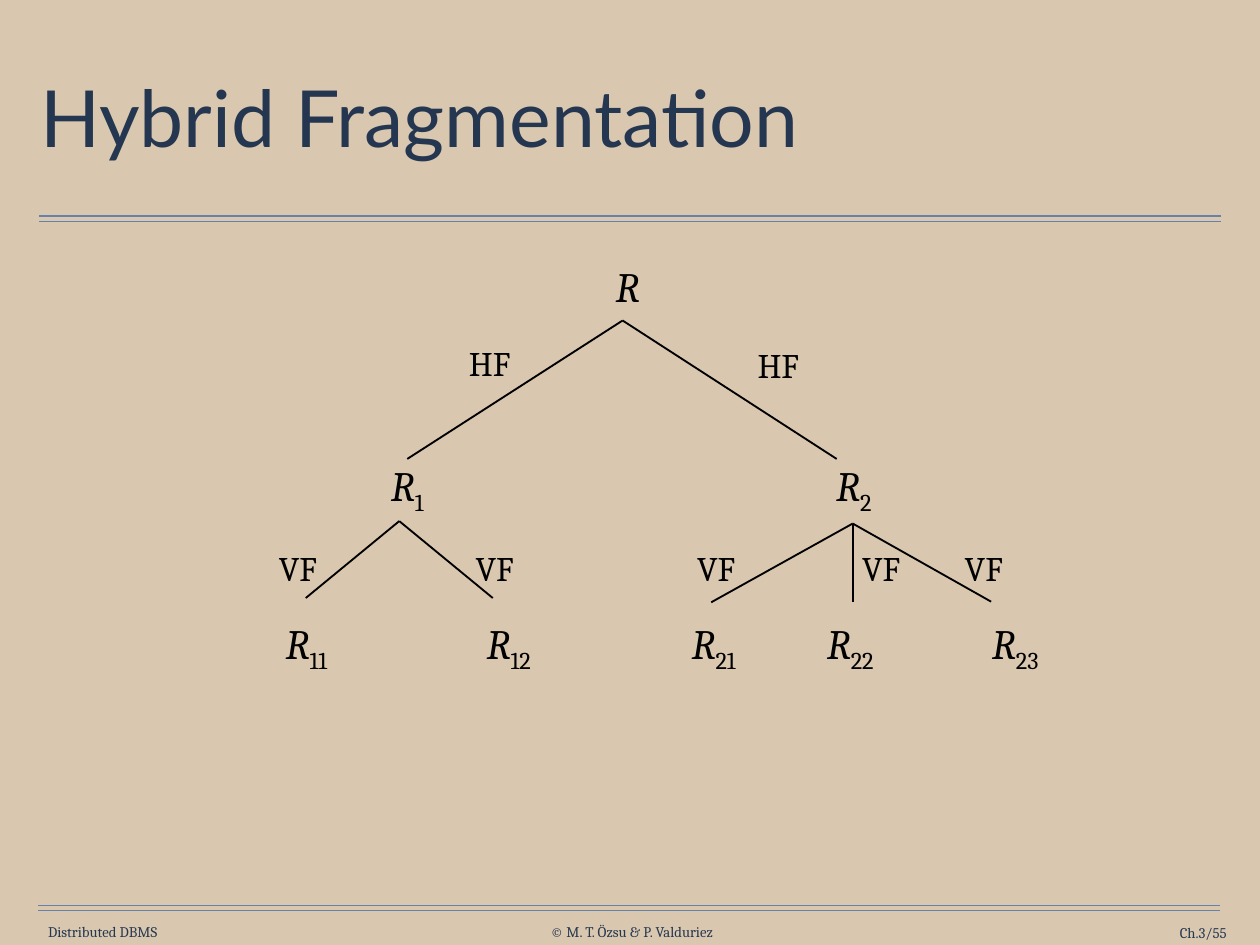
import pptx
import pptx.util
import pptx.dml.color
import pptx.enum.shapes
import pptx.enum.text
import lxml.etree
from dataclasses import dataclass

Pt = pptx.util.Pt
Align = pptx.enum.text.PP_ALIGN
Anchor = pptx.enum.text.MSO_ANCHOR


@dataclass(frozen=True)
class Theme:
    ground: str = "D9C8AF"
    title: str = "253750"
    foot: str = "263750"
    rule: str = "6682AA"
    ink: str = "000000"
    head_font: str = "Lato"
    body_font: str = "Cambria"
    title_size: int = 64
    node_size: int = 34
    edge_size: int = 28
    foot_size: int = 12


def color(code):
    return pptx.dml.color.RGBColor.from_string(code)


class Page:
    def __init__(self, slide, theme):
        self.slide = slide
        self.theme = theme
        fill = slide.background.fill
        fill.solid()
        fill.fore_color.rgb = color(theme.ground)

    def line(self, start, end, tint, width):
        kind = pptx.enum.shapes.MSO_CONNECTOR.STRAIGHT
        points = [Pt(n) for n in (*start, *end)]
        line = self.slide.shapes.add_connector(kind, *points)
        line.line.color.rgb = color(tint)
        line.line.width = Pt(width)
        space = pptx.oxml.ns.qn("a:effectLst")
        lxml.etree.SubElement(line._element.spPr, space)

    def rules(self, left, top):
        """Draw the double line that spans the slide."""
        for y in (top, top + 4.5):
            self.line((left, y), (left + 960.5, y), self.theme.rule, 1)

    def text(self, area, words, face, size, tint, align=Align.CENTER,
             anchor=Anchor.MIDDLE, inset=(0, 0), wrap=False):
        """Add a text box and return its paragraph."""
        box = self.slide.shapes.add_textbox(*[Pt(n) for n in area])
        frame = box.text_frame
        frame.word_wrap = wrap
        frame.vertical_anchor = anchor
        frame.margin_left = frame.margin_right = Pt(inset[0])
        frame.margin_top = frame.margin_bottom = Pt(inset[1])
        para = frame.paragraphs[0]
        para.alignment = align
        para.add_run().text = words
        para.font.name = face
        para.font.size = Pt(size)
        para.font.color.rgb = color(tint)
        return para

    def title(self, words):
        theme = self.theme
        para = self.text((28, 35.5, 967.5, 126.5), words, theme.head_font,
                         theme.title_size, theme.title, Align.LEFT,
                         inset=(4.5, 4.5), wrap=True)
        para.line_spacing = 0.9

    def foot(self, words, left, top, width, align=Align.CENTER):
        theme = self.theme
        self.text((left, top, width, 14.5), words, theme.body_font,
                  theme.foot_size, theme.foot, align)

    def label(self, words, mid, top, width, height, size):
        """Add a tree label centred on mid."""
        theme = self.theme
        return self.text((mid - width / 2, top, width, height), words,
                         theme.body_font, size, theme.ink,
                         anchor=Anchor.TOP, inset=(10, 5))

    def node(self, index, mid, top):
        """Add a relation R with its index set below the line."""
        width = 50 + 10 * len(index)
        para = self.label("R", mid, top, width, 51, self.theme.node_size)
        para.runs[0].font.italic = True
        if index:
            run = para.add_run()
            run.text = index
            run._r.get_or_add_rPr().set("baseline", "-25000")

    def edge(self, words, mid, top):
        self.label(words, mid, top, 60, 44, self.theme.edge_size)

    def fan(self, root, ends):
        """Draw the branches from one root."""
        for end in ends:
            self.line(root, end, self.theme.ink, 1.5)


# Index, centre and top of each relation
NODES = [
    ("", 510, 206.5),
    ("1", 331, 368.5), ("2", 694, 368.5),
    ("11", 249, 497), ("12", 413.5, 497),
    ("21", 580, 497), ("22", 691, 497), ("23", 825, 497),
]
# Kind of split, centre and top
EDGES = [("HF", 398, 273), ("HF", 632.5, 275)]
EDGES += [("VF", mid, 440) for mid in (242, 402, 582, 716, 799.5)]
# Root and ends of the branches
FANS = [
    ((506, 260.5), [(331, 373), (680, 373)]),
    ((324.5, 423.5), [(248.5, 486), (400.5, 486)]),
    ((693, 425.5), [(578, 489.5), (693, 489.5), (805.5, 489)]),
]


def main():
    deck = pptx.Presentation()
    deck.slide_width = Pt(1024)
    deck.slide_height = Pt(768)
    page = Page(deck.slides.add_slide(deck.slide_layouts[6]), Theme())

    page.rules(31.5, 175.5)
    page.rules(31, 735.75)
    page.foot("Distributed DBMS", 33.5, 749.5, 100)
    page.foot("© M. T. Özsu & P. Valduriez", 438.5, 749.5, 150)
    page.foot("Ch.3/55", 886.5, 751, 110.5, Align.RIGHT)
    page.title("Hybrid Fragmentation")
    for node in NODES:
        page.node(*node)
    for edge in EDGES:
        page.edge(*edge)
    for root, ends in FANS:
        page.fan(root, ends)
    deck.save("out.pptx")


if __name__ == "__main__":
    main()
